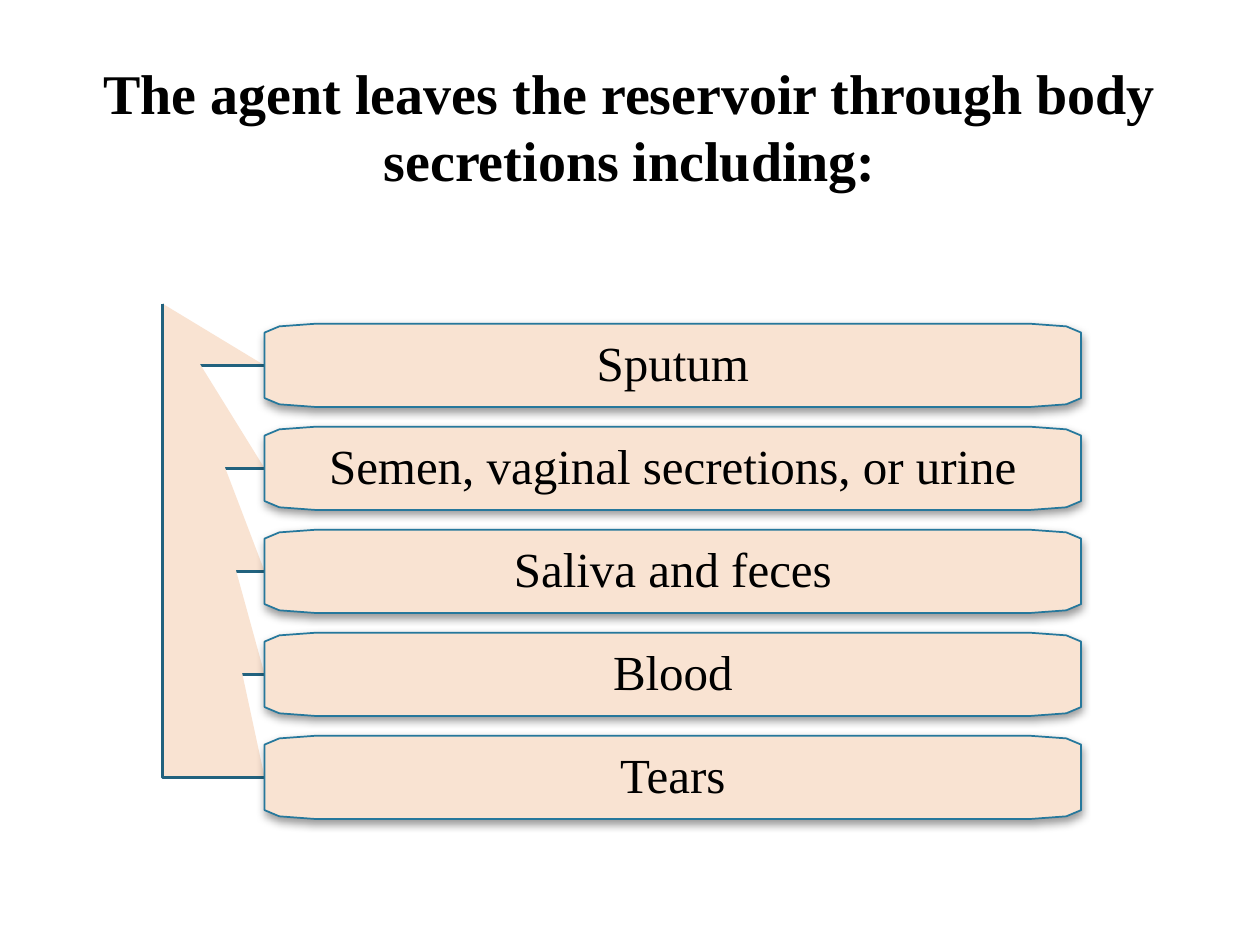
import math

import lxml.etree
import pptx
import pptx.dml.color
import pptx.enum.text
import pptx.oxml
import pptx.oxml.ns
import pptx.util

Inches = pptx.util.Inches
Pt = pptx.util.Pt


def rgb(hex_string):
    return pptx.dml.color.RGBColor.from_string(hex_string)


def draw_outline(points, closed, line_color, line_width):
    """Draw a filled freeform through points given in inches."""
    corners = [(Inches(x), Inches(y)) for x, y in points]
    builder = slide.shapes.build_freeform(*corners[0], scale=1.0)
    builder.add_line_segments(corners[1:], close=closed)
    outline = builder.convert_to_shape()
    outline.shadow.inherit = False
    outline.fill.solid()
    outline.fill.fore_color.rgb = rgb("F9E3D2")
    outline.line.color.rgb = rgb(line_color)
    outline.line.width = Pt(line_width)
    return outline


presentation = pptx.Presentation()
presentation.slide_width = Inches(10)
presentation.slide_height = Inches(7.5)
slide = presentation.slides.add_slide(presentation.slide_layouts[6])

# Title
title = slide.shapes.add_textbox(Inches(0.6), Inches(0.12), Inches(8.8), Inches(1.46))
title.text_frame.word_wrap = True
title.text_frame.vertical_anchor = pptx.enum.text.MSO_ANCHOR.BOTTOM
heading = title.text_frame.paragraphs[0]
heading.text = "The agent leaves the reservoir through body secretions including:"
heading.alignment = pptx.enum.text.PP_ALIGN.CENTER
heading_format = {"name": "Times New Roman", "size": Pt(32), "bold": True}
for attribute, value in heading_format.items():
    setattr(heading.font, attribute, value)
heading.font.color.rgb = rgb("000000")

# Secretion list: one bracket and one bar per item
secretions = [
    "Sputum",
    "Semen, vaginal secretions, or urine",
    "Saliva and feces",
    "Blood",
    "Tears",
]
trunk_x, trunk_top = 1.29, 2.41
bar_left, bar_width, bar_height = 2.1, 6.48, 0.66
first_top, last_top = 2.57, 5.84
pitch = (last_top - first_top) / (len(secretions) - 1)
corner_x, corner_y = 0.4, 0.07
arc_steps = 2

frame_format = {
    "word_wrap": True,
    "vertical_anchor": pptx.enum.text.MSO_ANCHOR.MIDDLE,
    "margin_left": Inches(0.04),
    "margin_right": Inches(0.04),
    "margin_top": Inches(0.03),
    "margin_bottom": Inches(0.03),
}
label_format = {"name": "Times New Roman", "size": Pt(28), "bold": False}
shadow_xml = (
    f'<a:outerShdw {pptx.oxml.ns.nsdecls("a")} blurRad="{Pt(5)}" dist="{Pt(2)}" '
    'dir="5400000" rotWithShape="0"><a:srgbClr val="000000">'
    '<a:alpha val="40000"/></a:srgbClr></a:outerShdw>'
)

for index, secretion in enumerate(secretions):
    bar_top = first_top + index * pitch
    bar_middle = bar_top + bar_height / 2

    # Bracket from the trunk to the bar
    bracket = [(trunk_x, trunk_top), (trunk_x, bar_middle), (bar_left, bar_middle)]
    draw_outline(bracket, False, "22627E", 2)

    # Bar with flat elliptical corners, clockwise from the left side
    bar_points = []
    for quarter in range(4):
        center_x = bar_left + (corner_x if quarter in (0, 3) else bar_width - corner_x)
        center_y = bar_top + (corner_y if quarter < 2 else bar_height - corner_y)
        for step in range(arc_steps + 1):
            angle = math.pi + (quarter + step / arc_steps) * math.pi / 2
            bar_points.append((center_x + corner_x * math.cos(angle),
                               center_y + corner_y * math.sin(angle)))
    bar = draw_outline(bar_points, True, "26789C", 1)
    effects = bar._element.spPr.find(pptx.oxml.ns.qn("a:effectLst"))
    effects.append(lxml.etree.fromstring(shadow_xml))

    # Label
    for attribute, value in frame_format.items():
        setattr(bar.text_frame, attribute, value)
    label = bar.text_frame.paragraphs[0]
    label.text = secretion
    label.alignment = pptx.enum.text.PP_ALIGN.CENTER
    label.line_spacing = 0.9
    for attribute, value in label_format.items():
        setattr(label.font, attribute, value)
    label.font.color.rgb = rgb("000000")

presentation.save("out.pptx")
